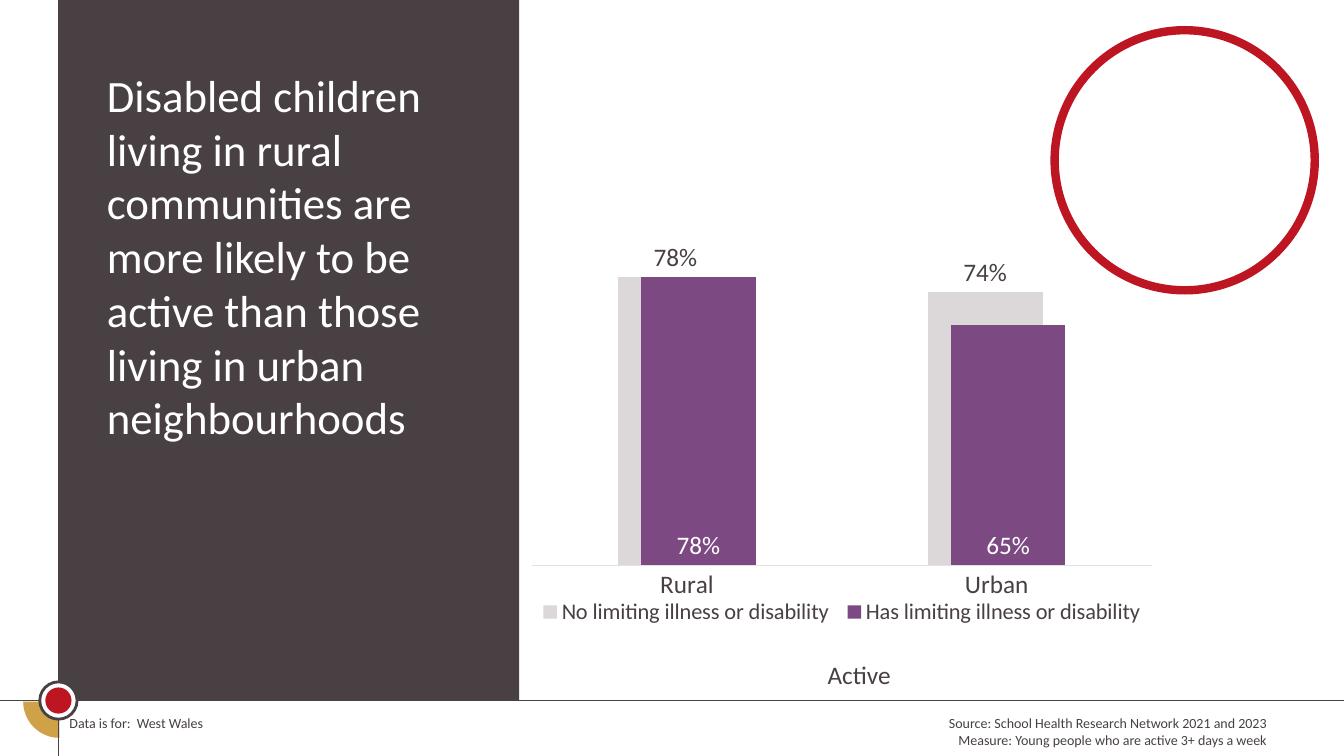
from lxml import etree
from pptx import Presentation
from pptx.chart.data import CategoryChartData
from pptx.dml.color import RGBColor
from pptx.enum.chart import XL_CHART_TYPE, XL_LABEL_POSITION, XL_LEGEND_POSITION, XL_TICK_MARK
from pptx.enum.shapes import MSO_CONNECTOR, MSO_SHAPE
from pptx.enum.text import MSO_ANCHOR, MSO_AUTO_SIZE, PP_ALIGN
from pptx.oxml.ns import qn
from pptx.util import Inches, Pt

COLUMN = XL_CHART_TYPE.COLUMN_CLUSTERED
OUTER, BASE = XL_LABEL_POSITION.OUTSIDE_END, XL_LABEL_POSITION.INSIDE_BASE
BOTTOM, NO_TICK = XL_LEGEND_POSITION.BOTTOM, XL_TICK_MARK.NONE
OVAL, RECT, PIE = MSO_SHAPE.OVAL, MSO_SHAPE.RECTANGLE, MSO_SHAPE.PIE
STRAIGHT, TOP, FIXED = MSO_CONNECTOR.STRAIGHT, MSO_ANCHOR.TOP, MSO_AUTO_SIZE.NONE
LEFT, RIGHT = PP_ALIGN.LEFT, PP_ALIGN.RIGHT

WIDE, HIGH = 13.33, 7.5
EDGE, FOOT = 0.58, 6.95  # crossing of the two rules
PANEL = 4.57
HUES = {name: RGBColor.from_string(code) for name, code in {
    "dark": "484043", "white": "FFFFFF", "red": "BD1622", "gold": "CFA149",
    "plum": "7C4982", "grey": "DCD7D9", "axis": "E5E1E3"}.items()}

prs = Presentation()
prs.slide_width, prs.slide_height = Inches(WIDE), Inches(HIGH)
slide = prs.slides.add_slide(prs.slide_layouts[5])
shapes = slide.shapes


def style(font, size, hue="dark"):
    font.name, font.size = "Calibri", Pt(size)
    font.color.rgb = HUES[hue]


def write(box, text, size, hue="dark", align=LEFT):
    frame = box.text_frame
    frame.text = text
    frame.word_wrap = True
    frame.auto_size = FIXED
    frame.vertical_anchor = TOP
    for para in frame.paragraphs:
        para.alignment = align
        for run in para.runs:
            style(run.font, size, hue)


# Corner pie and dark panel
half = 0.36
pie = shapes.add_shape(PIE, Inches(EDGE + 0.01 - half), Inches(FOOT + 0.01 - half),
                       Inches(2 * half), Inches(2 * half))
pie.adjustments[0], pie.adjustments[1] = 54, 108
panel = shapes.add_shape(RECT, Inches(EDGE), 0, Inches(PANEL), Inches(FOOT))
for shape, hue in ((pie, "gold"), (panel, "dark")):
    shape.shadow.inherit = False
    shape.fill.solid()
    shape.fill.fore_color.rgb = HUES[hue]
    shape.line.fill.background()

# Rules
for ends in ((EDGE, 0, EDGE, HIGH), (0, FOOT, WIDE, FOOT)):
    rule = shapes.add_connector(STRAIGHT, *map(Inches, ends))
    rule.line.color.rgb = HUES["dark"]
    rule.line.width = Pt(1)
    etree.SubElement(rule._element.spPr, qn("a:effectLst"))

# Circles: centre, diameter, fill, line, line width
for x, y, size, fill, line, width in (
        (EDGE, FOOT, 0.37, "white", "dark", 2),
        (EDGE, FOOT, 0.26, "red", None, 0),
        (11.75, 1.59, 2.58, "white", "red", 6)):
    ring = shapes.add_shape(OVAL, Inches(x - size / 2), Inches(y - size / 2),
                            Inches(size), Inches(size))
    ring.shadow.inherit = False
    ring.fill.solid()
    ring.fill.fore_color.rgb = HUES[fill]
    if line:
        ring.line.color.rgb = HUES[line]
        ring.line.width = Pt(width)
    else:
        ring.line.fill.background()

# Title, raised above the panel
title = shapes.title
title.left, title.top = Inches(0.96), Inches(0.62)
title.width, title.height = Inches(3.7), Inches(3.87)
write(title, "Disabled children living in rural communities are more likely "
      "to be active than those living in urban neighbourhoods", 32, "white")
shapes._spTree.append(title._element)

# Footer and chart caption
for place, text, size, align in (
        ((0.59, 7.04, 4.39, 0.27), "Data is for:  West Wales", 10, LEFT),
        ((6.19, 7.04, 6.47, 0.44), "Source: School Health Research Network 2021 and 2023\n"
         "Measure: Young people who are active 3+ days a week", 10, RIGHT),
        ((8.11, 6.49, 1.22, 0.4), "Active", 18, LEFT)):
    write(shapes.add_textbox(*map(Inches, place)), text, size, align=align)

# Chart
groups = (
    ("No limiting illness or disability", (0.78, 0.74), "grey", "dark", OUTER),
    ("Has limiting illness or disability", (0.78, 0.65), "plum", "white", BASE))
data = CategoryChartData(number_format="0%")
data.categories = ["Rural", "Urban"]
for name, values, *_ in groups:
    data.add_series(name, values)
chart = shapes.add_chart(COLUMN, Inches(EDGE + PANEL), Inches(1.85),
                         Inches(6.4), Inches(4.64), data).chart
chart.has_title = False
style(chart.font, 18)

plot = chart.plots[0]
plot.gap_width, plot.overlap = 150, 80
plot.vary_by_categories = False
for series, (_, _, fill, ink, spot) in zip(plot.series, groups):
    series.format.fill.solid()
    series.format.fill.fore_color.rgb = HUES[fill]
    labels = series.data_labels
    labels.show_value = True
    labels.number_format, labels.number_format_is_linked = "0%", False
    labels.position = spot
    style(labels.font, 18, ink)

scale = chart.value_axis
scale.minimum_scale, scale.maximum_scale = 0, 1
scale.has_major_gridlines = False
scale.visible = False
axis = chart.category_axis
axis.major_tick_mark = NO_TICK
axis.format.line.color.rgb = HUES["axis"]
axis.format.line.width = Pt(0.75)
style(axis.tick_labels.font, 18)

chart.has_legend = True
legend = chart.legend
legend.position, legend.include_in_layout = BOTTOM, False
style(legend.font, 16)

# Fixed places of plot and legend, as shares of the chart
area = chart._chartSpace.chart.plotArea
for part, shares in ((area, (0.02, 0.02, 0.96, 0.79)),
                     (legend._element, (0.02, 0.87, 0.96, 0.08))):
    layout = part.find(qn("c:layout"))
    if layout is None:
        layout = etree.Element(qn("c:layout"))
        if part is area:
            part.insert(0, layout)
        else:
            part.find(qn("c:legendPos")).addnext(layout)
    manual = etree.SubElement(layout, qn("c:manualLayout"))
    marks = [("xMode", "edge"), ("yMode", "edge"), *zip("xywh", shares)]
    if part is area:
        marks.insert(0, ("layoutTarget", "inner"))
    for tag, value in marks:
        etree.SubElement(manual, qn("c:" + tag)).set("val", str(value))

prs.save("out.pptx")
